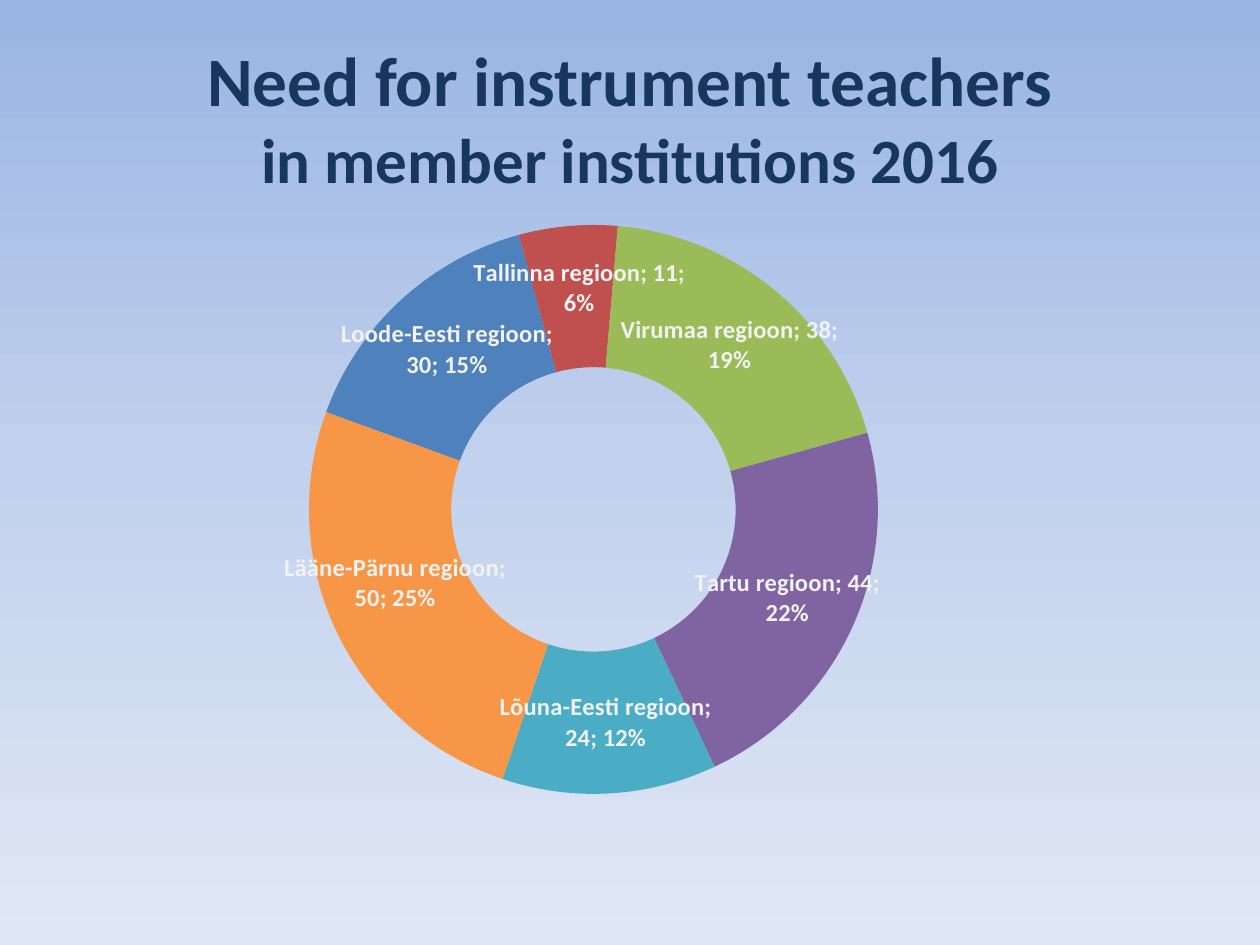
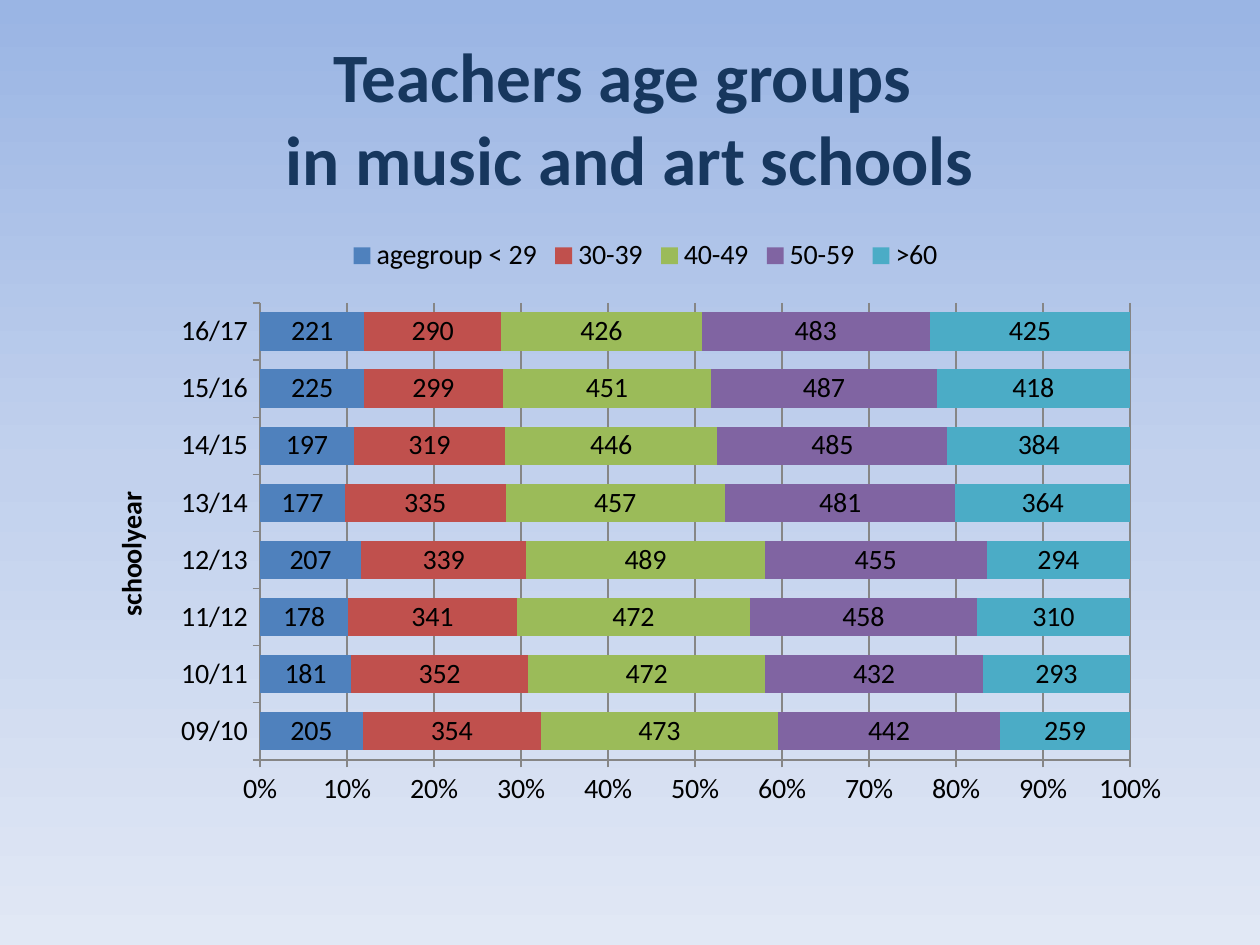
from copy import deepcopy

from pptx import Presentation
from pptx.chart.data import CategoryChartData
from pptx.dml.color import RGBColor
from pptx.enum.chart import XL_CHART_TYPE, XL_LEGEND_POSITION, XL_TICK_MARK
from pptx.enum.text import MSO_ANCHOR, MSO_AUTO_SIZE, PP_ALIGN
from pptx.oxml import parse_xml
from pptx.oxml.ns import nsdecls, qn
from pptx.util import Emu, Pt

RING = XL_CHART_TYPE.DOUGHNUT
BARS = XL_CHART_TYPE.BAR_STACKED_100
TOP = XL_LEGEND_POSITION.TOP
OUT = XL_TICK_MARK.OUTSIDE
CENTER = PP_ALIGN.CENTER
MIDDLE = MSO_ANCHOR.MIDDLE
NO_FIT = MSO_AUTO_SIZE.NONE

FONT = "Calibri"
BLACK, NAVY, PALE, GRAY = "000000", "17375E", "F2F2F2", "868686"
SKY = ((0, "9AB5E4"), (0.5, "C2D1ED"), (1, "E1E8F5"))
HUES = ("4F81BD", "C0504D", "9BBB59", "8064A2", "4BACC6", "F79646")
TITLE_SIZE = 39.6

REGIONS = {
    "Loode-Eesti regioon": 30,
    "Tallinna regioon": 11,
    "Virumaa regioon": 38,
    "Tartu regioon": 44,
    "Lõuna-Eesti regioon": 24,
    "Lääne-Pärnu regioon": 50,
}
SHIFTS = {0: (-2, -3), 1: (5, -9), 5: (-6, -19)}
YEARS = [f"{y:02}/{y + 1:02}" for y in range(9, 17)]
AGES = {
    "agegroup < 29": (205, 181, 178, 207, 177, 197, 225, 221),
    "30-39": (354, 352, 341, 339, 335, 319, 299, 290),
    "40-49": (473, 472, 472, 489, 457, 446, 451, 426),
    "50-59": (442, 432, 458, 455, 481, 485, 487, 483),
    ">60": (259, 293, 310, 294, 364, 384, 418, 425),
}


def px(n):
    return Emu(round(n * 914400 / 126))


def rgb(code):
    return RGBColor.from_string(code)


def paint(fill, code):
    fill.solid()
    fill.fore_color.rgb = rgb(code)


def style(font, size, color=BLACK, bold=False):
    font.name, font.size, font.bold = FONT, Pt(size), bold
    font.color.rgb = rgb(color)


def write(frame, *lines, sizes, color=BLACK, bold=True):
    """Write lines into one centred paragraph, each with its own size."""
    para = frame.paragraphs[0]
    para.alignment = CENTER
    for i, (line, size) in enumerate(zip(lines, sizes)):
        if i:
            para.add_line_break()
        run = para.add_run()
        run.text = line
        style(run.font, size, color, bold)


def place(node, box, spots, target="", mode="edge", at=0):
    """Lay out a chart part; spots are px inside the chart's box."""
    modes = "".join(f'<c:{k}Mode val="{mode}"/>' for k in "xy")
    sizes = "".join(f'<c:{k} val="{n / full}"/>'
                    for k, n, full in zip("xywh", spots, box[2:] * 2))
    new = parse_xml(
        f'<c:layout {nsdecls("c")}><c:manualLayout>{target}{modes}{sizes}'
        "</c:manualLayout></c:layout>")
    old = node.find(qn("c:layout"))
    if old is None:
        node.insert(at, new)
    else:
        node.replace(old, new)


class Deck:
    def __init__(self):
        self.prs = Presentation()
        self.prs.slide_width, self.prs.slide_height = px(1260), px(945)
        self.slide = None
        self.sky()

    def sky(self):
        """Set the shared gradient on the master."""
        master = self.prs.slide_master
        fill = master.background.fill
        fill.gradient()
        fill.gradient_angle = 270
        stops = master.element.find(".//" + qn("a:gsLst"))
        stops.append(deepcopy(stops[-1]))
        for stop, (pos, code) in zip(fill.gradient_stops, SKY):
            stop.position = pos
            stop.color.rgb = rgb(code)

    def page(self, *lines, sizes):
        self.slide = self.prs.slides.add_slide(self.prs.slide_layouts[5])
        title = self.slide.shapes.title
        title.left, title.top = px(63), px(38)
        title.width, title.height = px(1134), px(157)
        frame = title.text_frame
        frame.word_wrap, frame.auto_size = True, NO_FIT
        frame.vertical_anchor = MIDDLE
        write(frame, *lines, sizes=sizes, color=NAVY)

    def chart(self, kind, box, cats, rows, size, plot):
        data = CategoryChartData(number_format="General")
        data.categories = cats
        for name, vals in rows.items():
            data.add_series(name, vals)
        chart = self.slide.shapes.add_chart(kind, *map(px, box), data).chart
        chart.has_title = chart.has_legend = False
        style(chart.font, size)
        area = chart.element.find(".//" + qn("c:plotArea"))
        place(area, box, plot, target='<c:layoutTarget val="inner"/>')
        return chart

    def ring(self, box, values, turn, plot, shifts):
        chart = self.chart(RING, box, list(values),
                           {"Series 1": list(values.values())}, 12, plot)
        chart.plots[0].vary_by_categories = True
        part = chart.plots[0].series[0]
        for i, hue in enumerate(HUES):
            paint(part.points[i].format.fill, hue)
        tags = part.data_labels
        tags.show_value = tags.show_category_name = True
        tags.show_percentage = True
        style(tags.font, 14, PALE, True)
        for i in shifts:
            style(part.points[i].data_label.font, 14, PALE, True)
        for tag in chart.element.iter(qn("c:dLbl")):
            for name in ("showVal", "showCatName", "showPercent"):
                tag.find(qn("c:" + name)).set("val", "1")
            spot = shifts[int(tag.find(qn("c:idx")).get("val"))]
            place(tag, box, spot, mode="factor", at=1)
        for tag, val in (("firstSliceAng", turn), ("holeSize", 50)):
            chart.element.find(".//" + qn("c:" + tag)).set("val", str(val))

    def bars(self, box, cats, rows, name, plot, spot):
        chart = self.chart(BARS, box, cats, rows, 16, plot)
        bars = chart.plots[0]
        bars.vary_by_categories = False
        bars.gap_width, bars.overlap = 49, 100
        for part, hue in zip(bars.series, HUES):
            paint(part.format.fill, hue)
        bars.has_data_labels = True
        tags = bars.data_labels
        tags.show_value = True
        tags.number_format, tags.number_format_is_linked = "#,##0", False
        style(tags.font, 16)
        chart.has_legend = True
        chart.legend.position = TOP
        chart.legend.include_in_layout = False
        style(chart.legend.font, 16)

        side, base = chart.category_axis, chart.value_axis
        base.has_major_gridlines = True
        base.tick_labels.number_format = "0%"
        base.tick_labels.number_format_is_linked = False
        for axis in (side, base):
            axis.major_tick_mark = OUT
            style(axis.tick_labels.font, 16)
        for part in (side, base, base.major_gridlines):
            part.format.line.color.rgb = rgb(GRAY)

        write(side.axis_title.text_frame, name, sizes=[16])
        head = chart.element.find(".//" + qn("c:catAx") + "/" + qn("c:title"))
        body = head.find(".//" + qn("a:bodyPr"))
        body.set("rot", "-5400000")
        body.set("vert", "horz")
        place(head, box, spot)


def main():
    deck = Deck()
    deck.page("Need for instrument teachers", "in member institutions 2016",
              sizes=(TITLE_SIZE, 36))
    deck.ring((263, 214, 733, 580), REGIONS, 290, (40, 11, 581, 569), SHIFTS)

    deck.page("Teachers age groups ", "in music and art schools",
              sizes=(TITLE_SIZE, TITLE_SIZE))
    deck.bars((105, 224, 1081, 605), YEARS, AGES, "schoolyear",
              (155, 79, 870, 457), (2, 263))
    deck.prs.save("out.pptx")


if __name__ == "__main__":
    main()
